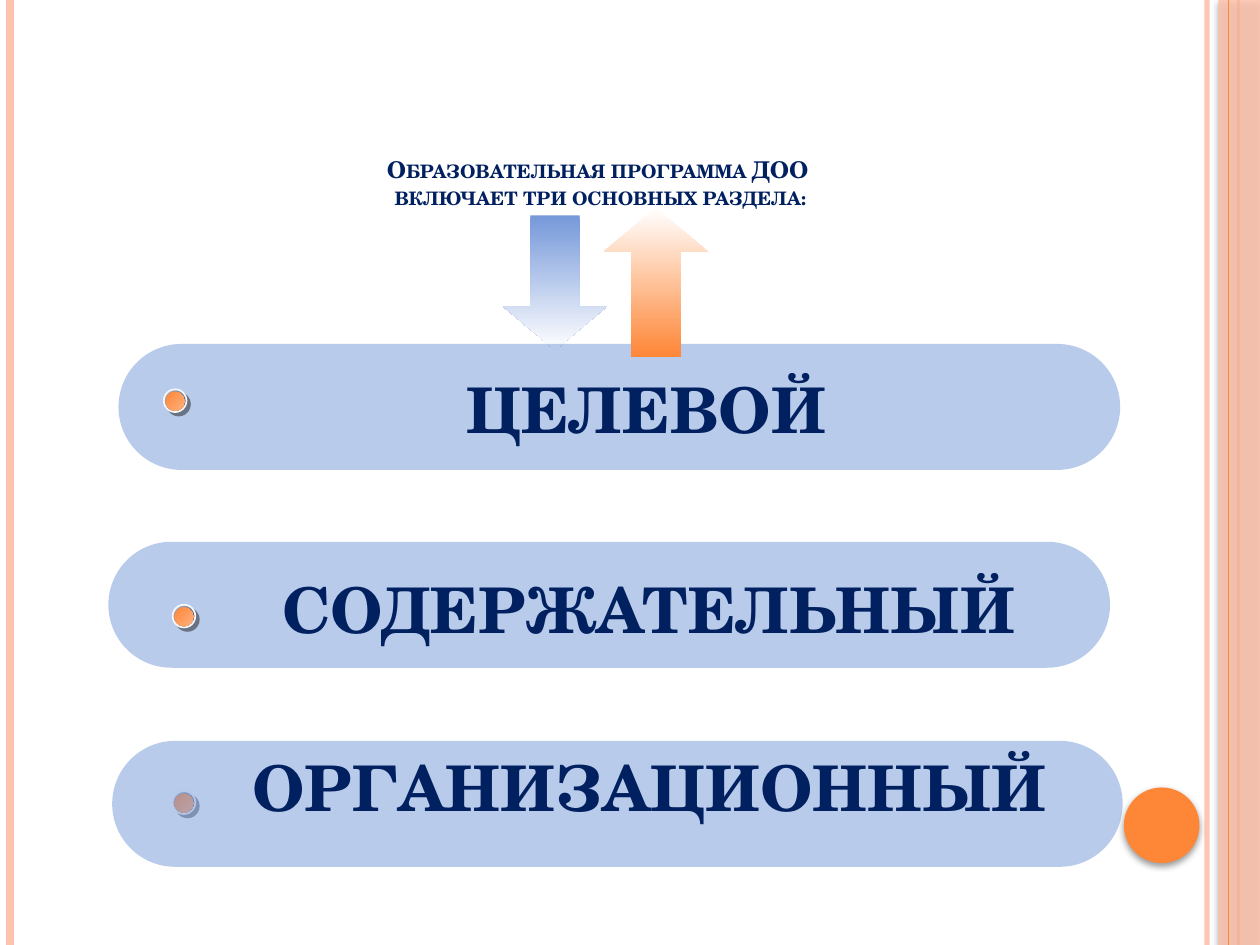
from dataclasses import dataclass

from lxml.etree import SubElement
from pptx import Presentation
from pptx.dml.color import RGBColor
from pptx.enum.shapes import MSO_CONNECTOR as Line, MSO_SHAPE as Kind
from pptx.enum.text import MSO_ANCHOR as Anchor, MSO_AUTO_SIZE as Fit, PP_ALIGN as Align
from pptx.oxml.ns import qn
from pptx.util import Inches, Pt


@dataclass(frozen=True)
class Theme:
    font: str = "TeX Gyre Schola"
    ink: str = "002060"
    blue: str = "7598D9"
    peach: str = "FEC3AE"
    orange: str = "FE8637"
    light: str = "FEB27F"
    white: str = "FFFFFF"
    rim: str = "F8F8F8"
    steel: tuple = ("BFC6D2", "223864")
    title: float = 13.2
    label: float = 36


@dataclass(frozen=True)
class Shade:
    color: str
    alpha: int
    blur: float
    dist: float
    angle: int


@dataclass(frozen=True)
class Stripe:
    x: float
    color: str
    width: float
    alpha: int = 100


@dataclass(frozen=True)
class Part:
    text: str
    bar: tuple
    box: tuple
    ball: tuple


THEME = Theme()
SOFT = Shade("000000", 40, 4, 2, 90)
HARD = Shade("1C1C1C", 50, 0, 2.8, 45)

STRIPES = [
    Stripe(9.58, THEME.peach, 3, 93),
    Stripe(0.08, THEME.peach, 4.5),
    Stripe(9.83, THEME.orange, 1.5),
]
EDGE = Stripe(9.75, THEME.orange, 0.75)

GOAL = Part("ЦЕЛЕВОЙ", (0.94, 2.73, 7.95, 1), (1.64, 2.96, 6.98, 0.64), (1.3, 3.09))
CONTENT = Part("СОДЕРЖАТЕЛЬНЫЙ", (0.86, 4.3, 7.95, 1), (1.72, 4.55, 6.86, 0.64), (1.37, 4.8))
ORDER = Part("ОРГАНИЗАЦИОННЫЙ", (0.89, 5.88, 8.02, 1), (1.81, 5.96, 6.69, 0.64), (1.37, 6.28))


def rgb(color: str) -> RGBColor:
    return RGBColor.from_string(color)


def fade(fill, alpha: int) -> None:
    """Set the opacity of a solid fill in percent."""
    color = fill._xPr.find(qn("a:solidFill"))[0]
    SubElement(color, qn("a:alpha"), val=str(alpha * 1000))


def blend(fill, start: str, end: str, angle: int) -> None:
    """Two-colour gradient; the angle runs counter-clockwise."""
    fill.gradient()
    fill.gradient_angle = angle
    for stop, color in zip(fill.gradient_stops, (start, end)):
        stop.color.rgb = rgb(color)


def cast(shape, shade: Shade) -> None:
    """Give the shape an outer shadow."""
    effect = shape._element.spPr.find(qn("a:effectLst"))
    outer = SubElement(effect, qn("a:outerShdw"), blurRad=str(Pt(shade.blur)),
                       dist=str(Pt(shade.dist)), dir=str(shade.angle * 60000),
                       algn="ctr", rotWithShape="0")
    color = SubElement(outer, qn("a:srgbClr"), val=shade.color)
    SubElement(color, qn("a:alpha"), val=str(shade.alpha * 1000))


def add_form(shapes, kind: Kind, at: tuple, color: str = "", alpha: int = 100):
    """Add a shape without outline or shadow."""
    shape = shapes.add_shape(kind, *map(Inches, at))
    shape.shadow.inherit = False
    shape.line.fill.background()
    if color:
        shape.fill.solid()
        shape.fill.fore_color.rgb = rgb(color)
        if alpha < 100:
            fade(shape.fill, alpha)
    return shape


def add_stripe(shapes, stripe: Stripe) -> None:
    x = Inches(stripe.x)
    line = shapes.add_connector(Line.STRAIGHT, x, 0, x, Inches(7.5))
    line.line.width = Pt(stripe.width)
    line.line.color.rgb = rgb(stripe.color)
    if stripe.alpha < 100:
        fade(line.line.fill, stripe.alpha)
    SubElement(line._element.spPr, qn("a:effectLst"))


def add_arrow(shapes, kind: Kind, at: tuple, top: str, low: str) -> None:
    arrow = add_form(shapes, kind, at)
    arrow.adjustments[0], arrow.adjustments[1] = 0.47, 0.42
    blend(arrow.fill, top, low, 270)


def add_ball(shapes, x: float, y: float) -> None:
    group = shapes.add_group_shape().shapes
    ring = add_form(group, Kind.OVAL, (x, y, 0.18, 0.18))
    blend(ring.fill, *THEME.steel, 315)
    ring.line.color.rgb = rgb(THEME.rim)
    ring.line.width = Pt(1)
    cast(ring, HARD)
    core = add_form(group, Kind.OVAL, (x + 0.015, y + 0.02, 0.15, 0.15))
    blend(core.fill, THEME.orange, THEME.light, 315)


def add_bar(shapes, part: Part) -> None:
    bar = add_form(shapes, Kind.ROUNDED_RECTANGLE, part.bar, THEME.blue, 50)
    bar.adjustments[0] = 0.5


def style(frame, size: float) -> None:
    frame.word_wrap = True
    for para in frame.paragraphs:
        para.alignment = Align.CENTER
        for run in para.runs:
            font = run.font
            font.name, font.size, font.bold = THEME.font, Pt(size), True
            font.color.rgb = rgb(THEME.ink)


def add_label(shapes, part: Part) -> None:
    frame = shapes.add_textbox(*map(Inches, part.box)).text_frame
    frame.text = part.text
    style(frame, THEME.label)
    frame.auto_size = Fit.SHAPE_TO_FIT_TEXT
    frame.paragraphs[0].line_spacing = 0.9


def set_title(title) -> None:
    title.left, title.top, title.width, title.height = map(Inches, (0.86, 0.47, 7.81, 1.25))
    frame = title.text_frame
    frame.text = "Образовательная программа ДОО \vвключает три основных раздела:"
    style(frame, THEME.title)
    frame.auto_size = Fit.NONE
    frame.vertical_anchor = Anchor.BOTTOM
    for run in frame.paragraphs[0].runs:
        run.font._element.set("cap", "small")


def main() -> None:
    deck = Presentation()
    deck.slide_width, deck.slide_height = Inches(10), Inches(7.5)
    shapes = deck.slides.add_slide(deck.slide_layouts[5]).shapes
    set_title(shapes.title)

    for stripe in STRIPES:
        add_stripe(shapes, stripe)
    cast(add_form(shapes, Kind.RECTANGLE, (9.67, 0, 0.33, 7.5), THEME.peach, 87), SOFT)
    add_stripe(shapes, EDGE)
    cast(add_form(shapes, Kind.OVAL, (8.92, 6.25, 0.6, 0.6), THEME.orange), SOFT)

    add_arrow(shapes, Kind.DOWN_ARROW, (3.99, 1.71, 0.83, 1.07), THEME.blue, THEME.white)
    add_ball(shapes, *ORDER.ball)  # lies under its translucent bar
    add_bar(shapes, GOAL)
    add_label(shapes, GOAL)
    add_arrow(shapes, Kind.UP_ARROW, (4.79, 1.65, 0.83, 1.18), THEME.white, THEME.orange)
    for part in (CONTENT, ORDER):
        add_bar(shapes, part)
    for part in (CONTENT, ORDER):
        add_label(shapes, part)
    for part in (CONTENT, GOAL):
        add_ball(shapes, *part.ball)

    deck.save("out.pptx")


if __name__ == "__main__":
    main()
